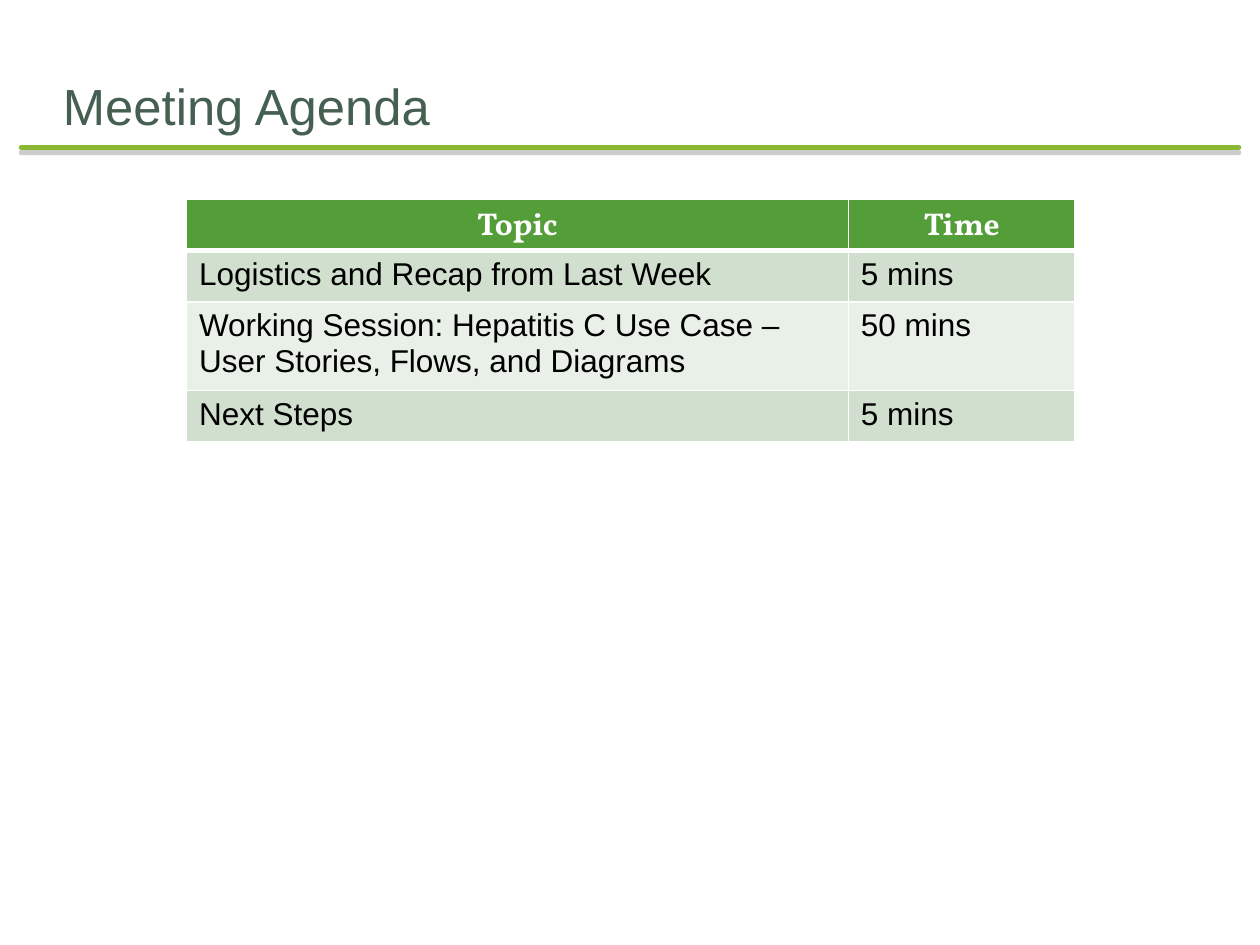
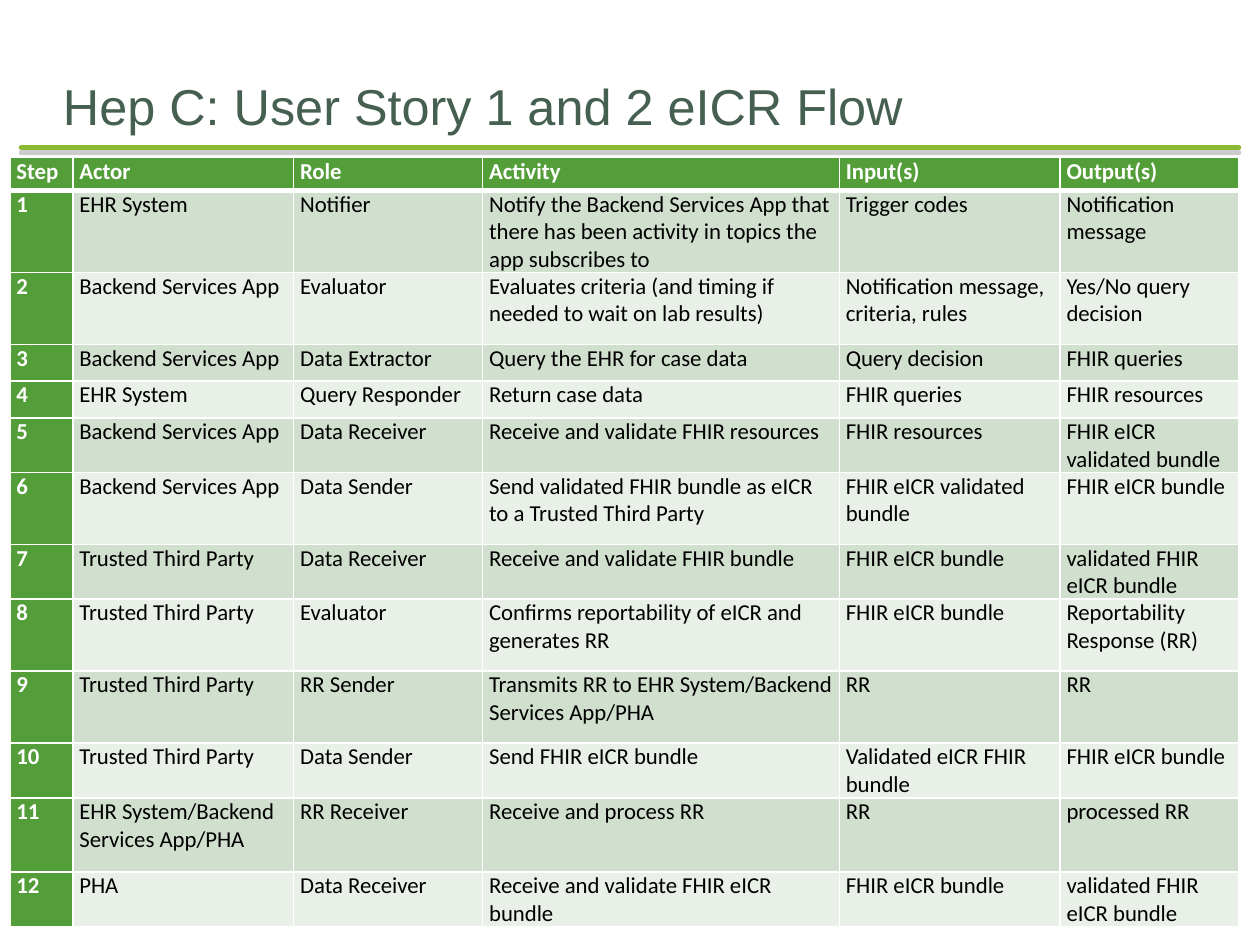
"""Build the meeting agenda and the eICR flow slides."""
from lxml import etree
from pptx import Presentation, util as u
from pptx.dml.color import RGBColor
from pptx.enum import shapes, text
from pptx.oxml import ns, parse_xml

WHITE, BLACK, GREEN, LIME = "FFFFFF", "000000", "549E39", "8AB833"
TITLE_COLOUR, BANDS = "455F51", ("D1DFCE", "E9F0E8")

AGENDA = [
    ("Topic", "Time"),
    ("Logistics and Recap from Last Week", "5 mins"),
    ("Working Session: Hepatitis C Use Case – User Stories, Flows, and Diagrams", "50 mins"),
    ("Next Steps", "5 mins"),
]

EHR, APP, PARTY = "EHR System", "Backend Services App", "Trusted Third Party"
FLOW_HEADER = ("Step", "Actor", "Role", "Activity", "Input(s)", "Output(s)")
FLOW_STEPS = [
    (EHR, "Notifier",
     "Notify the Backend Services App that there has been activity in topics the app subscribes to",
     "Trigger codes", "Notification message"),
    (APP, "Evaluator", "Evaluates criteria (and timing if needed to wait on lab results)",
     "Notification message, criteria, rules", "Yes/No query decision"),
    (APP, "Data Extractor", "Query the EHR for case data", "Query decision", "FHIR queries"),
    (EHR, "Query Responder", "Return case data", "FHIR queries", "FHIR resources"),
    (APP, "Data Receiver", "Receive and validate FHIR resources",
     "FHIR resources", "FHIR eICR validated bundle"),
    (APP, "Data Sender", "Send validated FHIR bundle as eICR to a Trusted Third Party",
     "FHIR eICR validated bundle", "FHIR eICR bundle"),
    (PARTY, "Data Receiver", "Receive and validate FHIR bundle",
     "FHIR eICR bundle", "validated FHIR eICR bundle"),
    (PARTY, "Evaluator", "Confirms reportability of eICR and generates RR",
     "FHIR eICR bundle", "Reportability Response (RR)"),
    (PARTY, "RR Sender", "Transmits RR to EHR System/Backend Services App/PHA", "RR", "RR"),
    (PARTY, "Data Sender", "Send FHIR eICR bundle",
     "Validated eICR FHIR bundle", "FHIR eICR bundle"),
    ("EHR System/Backend Services App/PHA", "RR Receiver", "Receive and process RR",
     "RR", "processed RR"),
    ("PHA", "Data Receiver", "Receive and validate FHIR eICR bundle",
     "FHIR eICR bundle", "validated FHIR eICR bundle"),
]
FLOW = [FLOW_HEADER] + [(str(number), *step) for number, step in enumerate(FLOW_STEPS, 1)]


def colour(value):
    """Turn a hex string into a colour."""
    return RGBColor.from_string(value)


def write(frame, words, font="Arial", size=18, ink=BLACK, bold=False, align=text.PP_ALIGN.LEFT):
    """Put one formatted paragraph into a text frame."""
    paragraph = frame.paragraphs[0]
    paragraph.alignment = align
    run = paragraph.add_run()
    run.text = words
    run.font.name, run.font.size, run.font.bold = font, u.Pt(size), bold
    run.font.color.rgb = colour(ink)


def set_borders(cell, **widths):
    """Draw white cell borders, one point wide unless a side says otherwise."""
    properties = cell._tc.get_or_add_tcPr()
    for side in "LRTB":
        line = etree.SubElement(properties, ns.qn(f"a:ln{side}"), w=str(u.Pt(widths.get(side, 1))))
        fill = etree.SubElement(line, ns.qn("a:solidFill"))
        etree.SubElement(fill, ns.qn("a:srgbClr"), val=WHITE)


class Deck:
    """Hold the shared style and the current slide."""

    def __init__(self):
        """Start an empty presentation."""
        self.presentation = Presentation()
        self.presentation.slide_width = u.Cm(25.4)
        self.presentation.slide_height = u.Cm(19.05)
        self.slide = None

    def add_slide(self, title, size):
        """Add a slide with its rule and title."""
        self.slide = self.presentation.slides.add_slide(self.presentation.slide_layouts[6])
        self.add_rule()
        self.add_title(title, size)

    def add_rule(self):
        """Draw the shadowed line under the title."""
        rule = self.slide.shapes.add_connector(
            shapes.MSO_CONNECTOR.STRAIGHT, u.Cm(0.43), u.Cm(2.97), u.Cm(24.97), u.Cm(2.97))
        rule.line.color.rgb = colour(LIME)
        rule.line.width = u.Pt(3)
        rule.line._get_or_add_ln().set("cap", "rnd")
        rule._element.spPr.append(parse_xml(
            f'<a:effectLst {ns.nsdecls("a")}>'
            f'<a:outerShdw dist="{u.Pt(3)}" dir="5400000" algn="ctr" rotWithShape="0">'
            '<a:srgbClr val="808080"><a:alpha val="40000"/></a:srgbClr>'
            '</a:outerShdw></a:effectLst>'))

    def add_title(self, words, size):
        """Write the slide title just above the rule."""
        frame = self.slide.shapes.add_textbox(
            u.Cm(1.27), u.Cm(1.27), u.Cm(22.86), u.Cm(1.47)).text_frame
        frame.word_wrap = True
        frame.vertical_anchor = text.MSO_ANCHOR.BOTTOM
        frame.margin_left = frame.margin_right = frame.margin_bottom = 0
        frame.margin_top = u.Cm(0.13)
        write(frame, words, size=size, ink=TITLE_COLOUR)

    def add_table(self, rows, left, top, widths, heights, font="Arial", header_font=None,
                  size=18, header_align=text.PP_ALIGN.LEFT, step_column=False, margins=None):
        """Add a banded table with a green header row and, if asked, a green step column."""
        table = self.slide.shapes.add_table(
            len(rows), len(widths), u.Cm(left), u.Cm(top),
            u.Cm(sum(widths)), u.Cm(sum(heights))).table
        table.first_row = table.horz_banding = False
        for column, width in zip(table.columns, widths):
            column.width = u.Cm(width)
        for row, height in zip(table.rows, heights):
            row.height = u.Cm(height)
        for row_index, row in enumerate(rows):
            header = row_index == 0
            for column_index, words in enumerate(row):
                cell = table.cell(row_index, column_index)
                strong = header or (step_column and column_index == 0)
                set_borders(cell, T=3 if row_index == 1 else 1, B=3 if header else 1)
                cell.fill.solid()
                cell.fill.fore_color.rgb = colour(GREEN if strong else BANDS[(row_index - 1) % 2])
                if margins:
                    cell.margin_left = cell.margin_right = u.Cm(margins[0])
                    cell.margin_top = cell.margin_bottom = u.Cm(margins[1])
                write(cell.text_frame, words, size=size, bold=strong,
                      font=header_font if header and header_font else font,
                      ink=WHITE if strong else BLACK,
                      align=header_align if header else text.PP_ALIGN.LEFT)


def main():
    """Build both slides and save them."""
    deck = Deck()
    deck.add_slide("Meeting Agenda", size=29)
    deck.add_table(AGENDA, 3.76, 4.01, [13.34, 4.57], [1.04] * 4,
                   header_font="Vollkorn", header_align=text.PP_ALIGN.CENTER)
    deck.add_slide("Hep C: User Story 1 and 2 eICR Flow", size=28.8)
    deck.add_table(FLOW, 0.2, 3.18, [1.27, 4.45, 3.81, 7.19, 4.45, 3.61],
                   [0.66, 1.22, 1.45, 0.74, 0.74, 1.07, 1.45, 1.07, 1.45, 1.45, 0.74, 1.5, 1.07],
                   font="Calibri", size=13, step_column=True, margins=(0.13, 0))
    deck.presentation.save("out.pptx")


if __name__ == "__main__":
    main()
